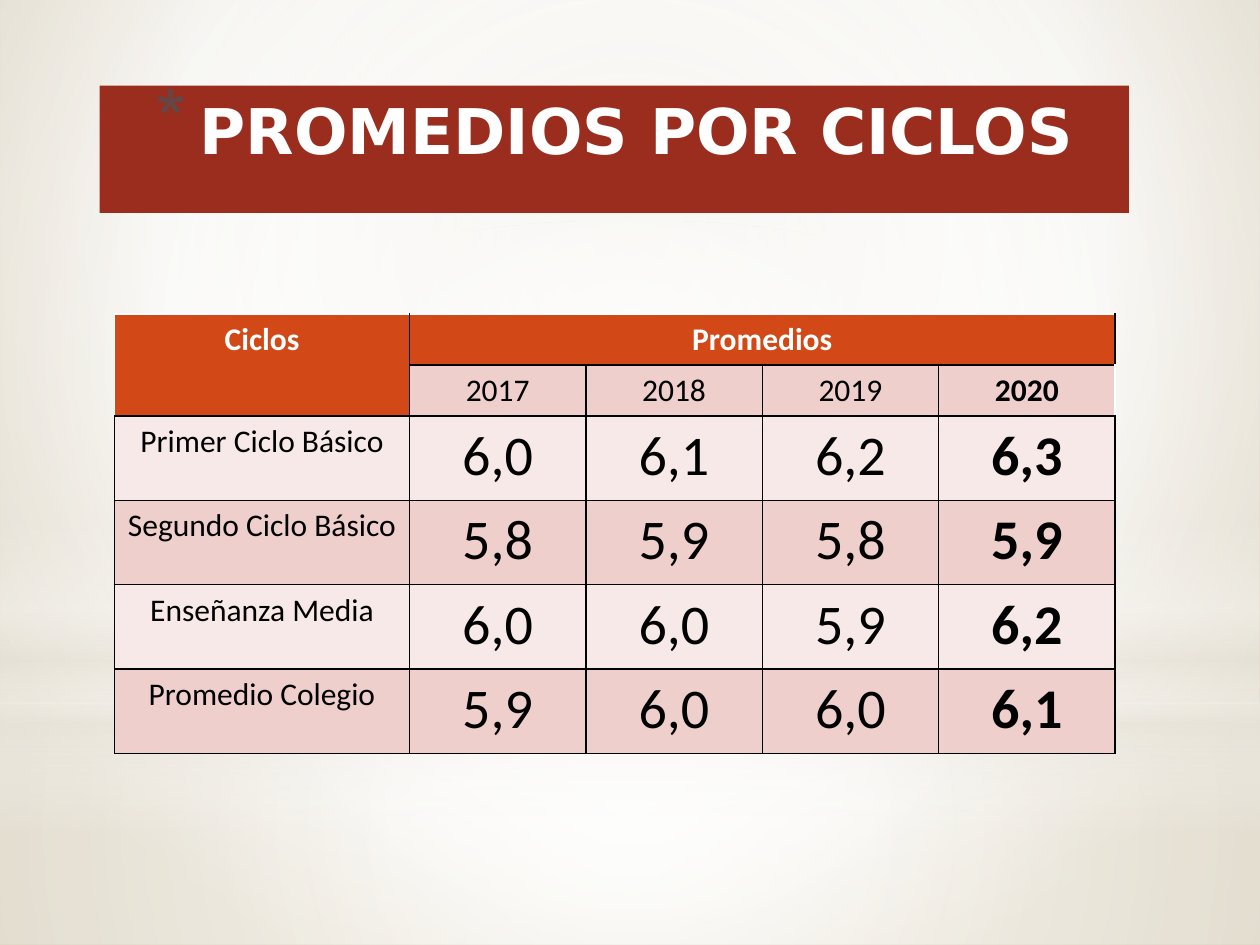
from lxml import etree
from pptx import Presentation
from pptx.dml.color import RGBColor
from pptx.enum.shapes import MSO_SHAPE as Preset
from pptx.enum.text import MSO_ANCHOR as Anchor, PP_ALIGN as Align
from pptx.oxml import parse_xml
from pptx.oxml.ns import qn
from pptx.util import Inches, Pt

A_NS = 'xmlns:a="http://schemas.openxmlformats.org/drawingml/2006/main"'

WHITE = RGBColor(0xFF, 0xFF, 0xFF)
BLACK = RGBColor(0x00, 0x00, 0x00)
NAVY = RGBColor(0x00, 0x20, 0x60)
BRICK = RGBColor(0x9B, 0x2D, 0x1F)
ORANGE = RGBColor(0xD3, 0x48, 0x17)
ROSE = RGBColor(0xEF, 0xCF, 0xCC)
PALE_ROSE = RGBColor(0xF7, 0xE9, 0xE8)
MAUVE = RGBColor(0x64, 0x46, 0x46)
CREAM = RGBColor(0xE9, 0xE5, 0xDC)
SAND = RGBColor(0xE3, 0xDD, 0xCF)
TAN = RGBColor(0xCD, 0xBF, 0x9F)

# Content
TITLE = "PROMEDIOS POR CICLOS"
ROWS = [
    ("Ciclos", "Promedios", "", "", ""),
    ("", "2017", "2018", "2019", "2020"),
    ("Primer Ciclo Básico", "6,0", "6,1", "6,2", "6,3"),
    ("Segundo Ciclo Básico", "5,8", "5,9", "5,8", "5,9"),
    ("Enseñanza Media", "6,0", "6,0", "5,9", "6,2"),
    ("Promedio Colegio", "5,9", "6,0", "6,0", "6,1"),
]
COLUMN_WIDTHS = [2.34] + [1.4] * 4
ROW_HEIGHTS = [0.4] * 2 + [0.67] * 4
HEADER_ROWS = 2

# Gradient stops: position, colour, opacity (percent)
CENTRE = (50, 50, 50, 50)
BACKDROP_STOPS = [(0, SAND, 100), (60, WHITE, 100), (100, TAN, 100)]
BACKDROP_LAYERS = [  # preset, top, height, stops, focus (None = vertical)
    (Preset.RECTANGLE, 5.58, 1.92,
     [(0, WHITE, 91), (37, WHITE, 76), (100, CREAM, 79)], CENTRE),
    (Preset.RECTANGLE, 0, 5.58,
     [(0, WHITE, 89), (48, WHITE, 62), (100, CREAM, 79)], CENTRE),
    (Preset.RECTANGLE, 4.12, 2.5,
     [(0, WHITE, 0), (29, WHITE, 30), (45, CREAM, 40), (55, WHITE, 26),
      (65, CREAM, 60), (100, WHITE, 0)], None),
    (Preset.OVAL, 1.75, 5.58, [(0, WHITE, 100), (56, WHITE, 0)], CENTRE),
]


def set_gradient(fill, owner, stops, focus):
    """Replace the solid fill found in owner by a gradient."""
    fill.solid()
    solid = owner.find(".//" + qn("a:solidFill"))
    stop_xml = "".join(
        f'<a:gs pos="{position * 1000}"><a:srgbClr val="{color}">'
        f'<a:alpha val="{opacity * 1000}"/></a:srgbClr></a:gs>'
        for position, color, opacity in stops)
    if focus:
        sides = " ".join(f'{side}="{value * 1000}"'
                         for side, value in zip("ltrb", focus))
        direction = f'<a:path path="circle"><a:fillToRect {sides}/></a:path>'
    else:
        direction = '<a:lin ang="5400000" scaled="0"/>'
    solid.getparent().replace(solid, parse_xml(
        f'<a:gradFill {A_NS} rotWithShape="1"><a:gsLst>{stop_xml}</a:gsLst>'
        f'{direction}</a:gradFill>'))


def add_plain_shape(slide, preset, left, top, width, height):
    shape = slide.shapes.add_shape(preset, Inches(left), Inches(top),
                                   Inches(width), Inches(height))
    shape.shadow.inherit = False
    shape.line.fill.background()
    return shape


def format_text(paragraph, size, font, color, bold):
    paragraph.alignment = Align.CENTER
    for run in paragraph.runs:
        run.font.size = Pt(size)
        run.font.name = font
        run.font.color.rgb = color
        run.font.bold = bold


def set_borders(cell, colors):
    """Colours in the order left, right, top, bottom."""
    properties = cell._tc.get_or_add_tcPr()
    for index, (side, color) in enumerate(zip("LRTB", colors)):
        properties.insert(index, parse_xml(
            f'<a:ln{side} {A_NS} w="12700"><a:solidFill>'
            f'<a:srgbClr val="{color}"/></a:solidFill></a:ln{side}>'))


def add_backdrop(slide):
    set_gradient(slide.background.fill, slide._element.cSld,
                 BACKDROP_STOPS, (20, 10, 20, 60))
    for preset, top, height, stops, focus in BACKDROP_LAYERS:
        layer = add_plain_shape(slide, preset, 0, top, 10, height)
        set_gradient(layer.fill, layer._element.spPr, stops, focus)


def add_averages_table(slide):
    table = slide.shapes.add_table(
        len(ROWS), len(COLUMN_WIDTHS), Inches(0.91), Inches(2.49),
        Inches(sum(COLUMN_WIDTHS)), Inches(sum(ROW_HEIGHTS))).table
    table.first_row = table.horz_banding = False
    for column, width in zip(table.columns, COLUMN_WIDTHS):
        column.width = Inches(width)
    for row, height in zip(table.rows, ROW_HEIGHTS):
        row.height = Inches(height)
    table.cell(0, 0).merge(table.cell(1, 0))
    table.cell(0, 1).merge(table.cell(0, 4))

    last = len(COLUMN_WIDTHS) - 1
    for r, texts in enumerate(ROWS):
        in_header = r < HEADER_ROWS
        for c, text in enumerate(texts):
            cell = table.cell(r, c)
            orange = r == 0 or (in_header and c == 0)
            cell.margin_left = cell.margin_right = Inches(0.08)
            cell.vertical_anchor = Anchor.TOP
            cell.text_frame.text = text
            format_text(cell.text_frame.paragraphs[0],
                        18 if in_header or c == 0 else 32, "Calibri",
                        WHITE if orange else BLACK, orange or c == last)
            cell.fill.solid()
            cell.fill.fore_color.rgb = (
                ORANGE if orange else PALE_ROSE if r % 2 == 0 else ROSE)
            left = right = top = BLACK
            if in_header:
                left = {0: WHITE, 1: NAVY}.get(c, BLACK)
                right = {0: NAVY, last: WHITE}.get(c, BLACK)
            if r == 0:
                top = WHITE
            set_borders(cell, (left, right, top, BLACK))


def add_title(slide):
    banner = add_plain_shape(slide, Preset.RECTANGLE, 0.79, 0.68, 8.17, 1.01)
    banner.fill.solid()
    banner.fill.fore_color.rgb = BRICK
    frame = banner.text_frame
    frame.word_wrap = True
    frame.vertical_anchor = Anchor.TOP
    frame.text = TITLE
    paragraph = frame.paragraphs[0]
    format_text(paragraph, 36, "DejaVu Sans", WHITE, True)
    # Asterisk bullet with a hanging indent
    properties = paragraph._p.get_or_add_pPr()
    properties.set("marL", str(Inches(0.35)))
    properties.set("indent", str(Inches(-0.35)))
    color = etree.SubElement(properties, qn("a:buClr"))
    etree.SubElement(color, qn("a:srgbClr"), val=str(MAUVE))
    etree.SubElement(properties, qn("a:buSzPct"), val="128000")
    etree.SubElement(properties, qn("a:buChar"), char="*")


def main():
    presentation = Presentation()
    presentation.slide_width = Inches(10)
    presentation.slide_height = Inches(7.5)
    slide = presentation.slides.add_slide(presentation.slide_layouts[6])
    add_backdrop(slide)
    add_averages_table(slide)
    add_title(slide)
    presentation.save("out.pptx")


if __name__ == "__main__":
    main()
